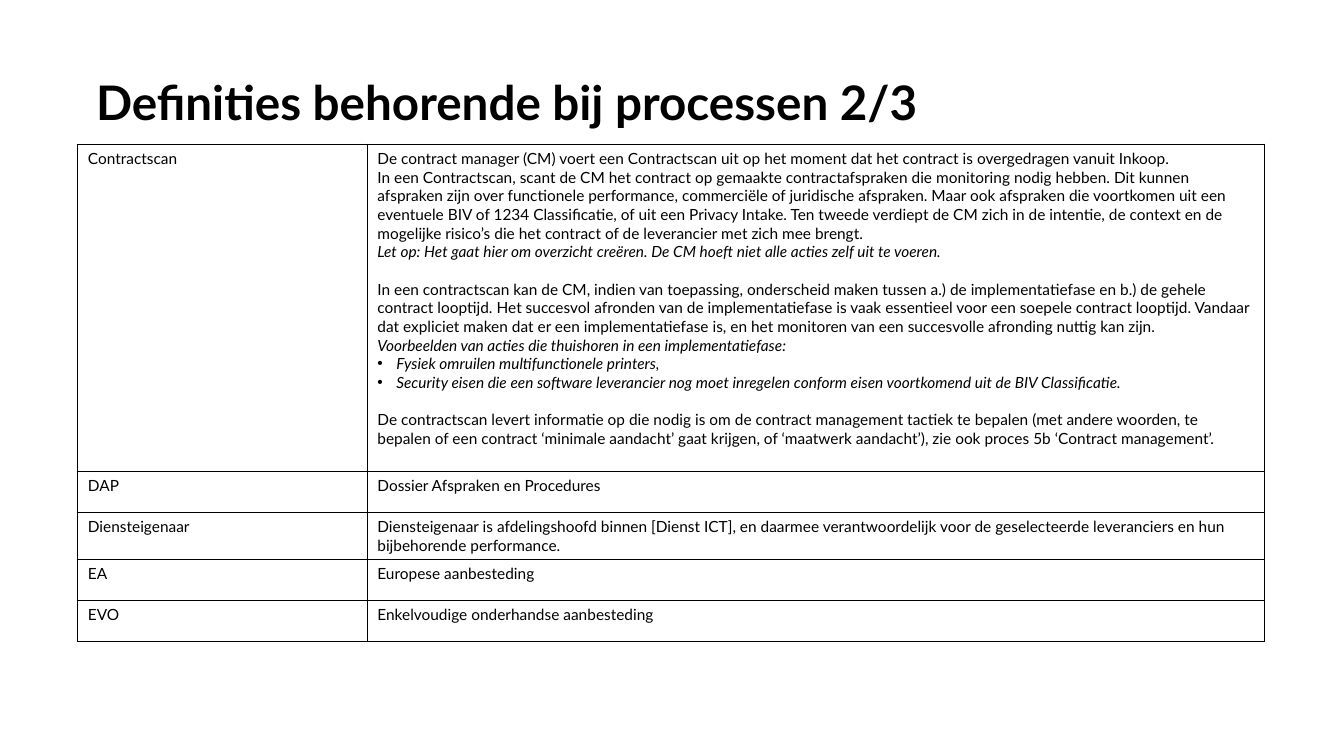
from lxml.etree import SubElement
from pptx import Presentation
from pptx.dml.color import RGBColor
from pptx.enum.text import MSO_ANCHOR, MSO_AUTO_SIZE, PP_ALIGN
from pptx.oxml.ns import qn
from pptx.util import Pt

TITLE = "Definities behorende bij processen 2/3"
PLAIN, NOTE, BULLET = "plain", "note", "bullet"
SCAN = [
    (PLAIN, False, "De contract manager (CM) voert een Contractscan uit op het moment dat het contract is overgedragen vanuit Inkoop."),
    (PLAIN, False, "In een Contractscan, scant de CM het contract op gemaakte contractafspraken die monitoring nodig hebben. Dit kunnen afspraken zijn over functionele performance, commerciële of juridische afspraken. Maar ook afspraken die voortkomen uit een eventuele BIV of 1234 Classificatie, of uit een Privacy Intake. Ten tweede verdiept de CM zich in de intentie, de context en de mogelijke risico’s die het contract of de leverancier met zich mee brengt."),
    (NOTE, False, "Let op: Het gaat hier om overzicht creëren. De CM hoeft niet alle acties zelf uit te voeren."),
    (PLAIN, True, "In een contractscan kan de CM, indien van toepassing, onderscheid maken tussen a.) de implementatiefase en b.) de gehele contract looptijd. Het succesvol afronden van de implementatiefase is vaak essentieel voor een soepele contract looptijd. Vandaar dat expliciet maken dat er een implementatiefase is, en het monitoren van een succesvolle afronding nuttig kan zijn."),
    (NOTE, False, "Voorbeelden van acties die thuishoren in een implementatiefase:"),
    (BULLET, False, "Fysiek omruilen multifunctionele printers,"),
    (BULLET, False, "Security eisen die een software leverancier nog moet inregelen conform eisen voortkomend uit de BIV Classificatie."),
    (PLAIN, True, "De contractscan levert informatie op die nodig is om de contract management tactiek te bepalen (met andere woorden, te bepalen of een contract ‘minimale aandacht’ gaat krijgen, of ‘maatwerk aandacht’), zie ook proces 5b ‘Contract management’."),
]
DEFINITIONS = [
    ("Contractscan", SCAN, 233.6),
    ("DAP", "Dossier Afspraken en Procedures", 29.3),
    ("Diensteigenaar", "Diensteigenaar is afdelingshoofd binnen [Dienst ICT], en daarmee verantwoordelijk voor de geselecteerde leveranciers en hun bijbehorende performance.", 33.8),
    ("EA", "Europese aanbesteding", 29.3),
    ("EVO", "Enkelvoudige onderhandse aanbesteding", 29.3),
]
COLUMNS = (206.8, 640.6)
FONT, BLACK = "Lato", "000000"
TEXT_SIZE, LINE_GAP, INDENT = 11, 13.3, 13.5


def color(value):
    return RGBColor.from_string(value)


def add_run(paragraph, text, size, bold=False, italic=False):
    run = paragraph.add_run()
    run.text = text
    run.font.name, run.font.size = FONT, Pt(size)
    run.font.bold, run.font.italic = bold, italic
    run.font.color.rgb = color(BLACK)


def add_bullet(paragraph):
    properties = paragraph._p.get_or_add_pPr()
    properties.set("marL", str(Pt(INDENT)))
    properties.set("indent", str(-Pt(INDENT)))
    SubElement(properties, qn("a:buFont"), typeface="Arial")
    SubElement(properties, qn("a:buChar"), char="•")


def add_borders(cell):
    properties = cell._tc.get_or_add_tcPr()
    for side in ("lnL", "lnR", "lnT", "lnB"):
        border = SubElement(properties, qn(f"a:{side}"), w=str(Pt(1)))
        fill = SubElement(border, qn("a:solidFill"))
        SubElement(fill, qn("a:srgbClr"), val=BLACK)


def fill_cell(cell, content):
    add_borders(cell)
    cell.fill.background()
    parts = [(PLAIN, False, content)] if isinstance(content, str) else content
    frame = cell.text_frame
    for index, (kind, gap, text) in enumerate(parts):
        paragraph = frame.add_paragraph() if index else frame.paragraphs[0]
        if kind == BULLET:
            add_bullet(paragraph)
        if gap:
            paragraph.space_before = Pt(LINE_GAP)
        add_run(paragraph, text, TEXT_SIZE, italic=kind != PLAIN)


def main():
    deck = Presentation()
    deck.slide_width, deck.slide_height = Pt(960), Pt(540)
    slide = deck.slides.add_slide(deck.slide_layouts[5])

    title = slide.shapes.title
    title.left, title.top, title.width, title.height = Pt(68.6), Pt(56.9), Pt(835), Pt(26.6)
    heading = title.text_frame
    heading.margin_left = heading.margin_right = heading.margin_top = heading.margin_bottom = 0
    heading.vertical_anchor = MSO_ANCHOR.TOP
    heading.auto_size = MSO_AUTO_SIZE.NONE
    heading.word_wrap = True
    heading.paragraphs[0].alignment = PP_ALIGN.LEFT
    heading.paragraphs[0].line_spacing = 0.9
    add_run(heading.paragraphs[0], TITLE, 34, bold=True)

    height = sum(row_height for _, _, row_height in DEFINITIONS)
    definitions = slide.shapes.add_table(
        len(DEFINITIONS), len(COLUMNS), Pt(55.6), Pt(103), Pt(sum(COLUMNS)), Pt(height)).table
    definitions.first_row = definitions.horz_banding = False
    for column, width in zip(definitions.columns, COLUMNS):
        column.width = Pt(width)
    for row, (term, meaning, row_height) in zip(definitions.rows, DEFINITIONS):
        row.height = Pt(row_height)
        for cell, content in zip(row.cells, (term, meaning)):
            fill_cell(cell, content)

    deck.save("out.pptx")


if __name__ == "__main__":
    main()
